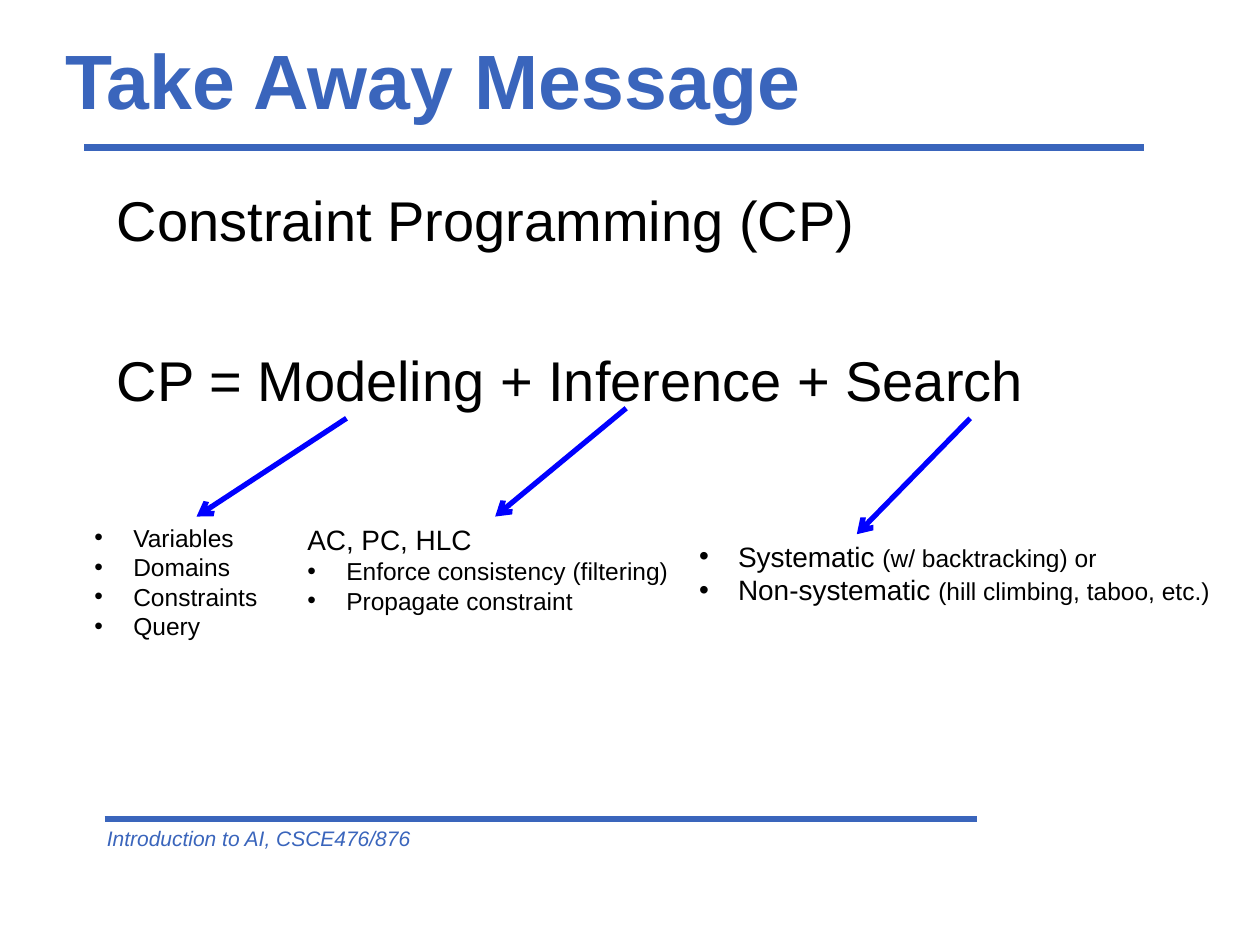
from lxml import etree
from pptx import Presentation
from pptx.dml.color import RGBColor
from pptx.enum.shapes import MSO_CONNECTOR
from pptx.enum.text import MSO_ANCHOR
from pptx.oxml.ns import qn
from pptx.util import Inches, Pt

STRAIGHT = MSO_CONNECTOR.STRAIGHT
TOP, MIDDLE = MSO_ANCHOR.TOP, MSO_ANCHOR.MIDDLE
FONT = "Arial"
COLORS = {"accent": "3A65BC", "text": "000000", "arrow": "0000FF"}
BULLET_INDENT = Inches(0.31)


def add_line(slide, start, end, color, width, arrow=False):
    line = slide.shapes.add_connector(STRAIGHT, *(Inches(v) for v in start + end))
    line.line.color.rgb = RGBColor.from_string(COLORS[color])
    line.line.width = Pt(width)
    if arrow:
        etree.SubElement(line.line._get_or_add_ln(), qn("a:tailEnd"), type="arrow")
    etree.SubElement(line._element.spPr, qn("a:effectLst"))


def add_bullet(paragraph):
    properties = paragraph._p.get_or_add_pPr()
    properties.set("marL", str(BULLET_INDENT))
    properties.set("indent", str(-BULLET_INDENT))
    etree.SubElement(properties, qn("a:buFont"), typeface=FONT)
    etree.SubElement(properties, qn("a:buChar"), char="•")


def add_text(slide, box, lines, color="text", anchor=TOP):
    """Each line is (bulleted, [(text, size), ...]); returns the paragraphs."""
    shape = slide.shapes.add_textbox(*(Inches(v) for v in box))
    frame = shape.text_frame
    frame.word_wrap = True
    frame.vertical_anchor = anchor
    for index, (bulleted, runs) in enumerate(lines):
        paragraph = frame.add_paragraph() if index else frame.paragraphs[0]
        if bulleted:
            add_bullet(paragraph)
        paragraph.font.name = FONT
        paragraph.font.color.rgb = RGBColor.from_string(COLORS[color])
        sizes = {size for _, size in runs}
        if len(sizes) == 1:
            paragraph.font.size = Pt(sizes.pop())
        for text, size in runs:
            run = paragraph.add_run()
            run.text = text
            if len(runs) > 1:
                run.font.size = Pt(size)
    return frame.paragraphs


def add_header(slide, box):
    left, top, width, height = box
    title, = add_text(slide, box, [(False, [("Take Away Message", 44)])],
                      "accent", MIDDLE)
    title.font.bold = True
    rule_y = top + height - 0.08
    add_line(slide, (left + 0.25, rule_y), (left + width - 0.34, rule_y), "accent", 4)


def add_body(slide, box):
    lines = ["Constraint Programming (CP)", "CP = Modeling + Inference + Search"]
    paragraphs = add_text(slide, box, [(False, [(text, 32)]) for text in lines])
    paragraphs[1].space_before = Pt(53)


def add_component(slide, box, lines, arrow_start, arrow_end):
    """One part of the CP equation: its details and the arrow leading to them."""
    add_text(slide, box, lines)
    add_line(slide, arrow_start, arrow_end, "arrow", 3, arrow=True)


def add_footer(slide, box):
    left, top, _, _ = box
    add_line(slide, (left + 0.08, top), (left + 7, top), "accent", 4)
    footer, = add_text(slide, box, [(False, [("Introduction to AI, CSCE476/876", 12)])],
                       "accent")
    footer.font.italic = True


def main():
    presentation = Presentation()
    presentation.slide_width = Inches(10)
    presentation.slide_height = Inches(7.5)
    slide = presentation.slides.add_slide(presentation.slide_layouts[6])

    add_header(slide, (0.42, 0, 9, 1.25))
    add_body(slide, (0.83, 1.42, 9.1, 2.2))

    # Modeling
    modeling = ["Variables", "Domains", "Constraints", "Query"]
    add_component(slide, (0.65, 4.1, 1.83, 1.04),
                  [(True, [(text, 14)]) for text in modeling],
                  (2.75, 3.32), (1.56, 4.1))
    # Inference
    add_component(slide, (2.34, 4.1, 3.19, 1.14),
                  [(False, [("AC, PC, HLC", 16)]),
                   (True, [("Enforce consistency (filtering)", 14)]),
                   (True, [("Propagate constraint", 14)])],
                  (4.97, 3.24), (3.93, 4.1))
    # Search
    add_component(slide, (5.45, 4.23, 4.3, 0.64),
                  [(True, [("Systematic ", 16), ("(w/ backtracking) or", 14)]),
                   (True, [("Non-systematic ", 16),
                           ("(hill climbing, taboo, etc.)", 14)])],
                  (7.7, 3.32), (6.8, 4.24))

    add_footer(slide, (0.75, 6.5, 5.25, 0.3))
    presentation.save("out.pptx")


if __name__ == "__main__":
    main()
